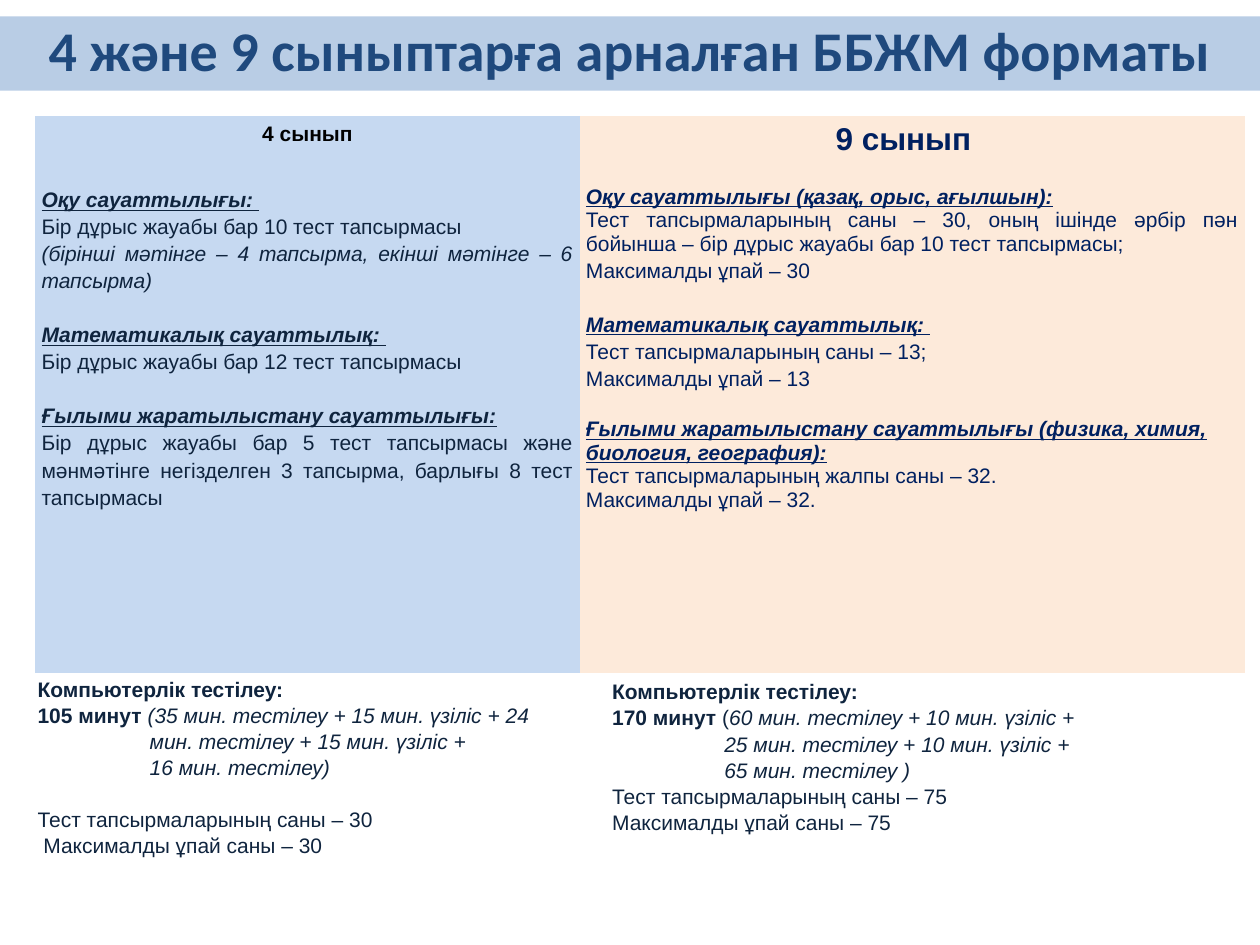
"""Builds a slide that compares the test formats for grades 4 and 9."""
from pptx import Presentation, util as u
from pptx.dml import color as c
from pptx.enum import text as t

COLOURS = {"band": "B9CDE5", "title": "1F497D", "blue": "C6D9F1", "peach": "FDEADA",
           "black": "000000", "navy": "002060", "ink": "0F243E"}
PLAIN_GRID = "{2D5ABB26-0587-4C30-8999-92F81FD0307C}"
CENTER, JUSTIFY, LEFT = t.PP_ALIGN.CENTER, t.PP_ALIGN.JUSTIFY, t.PP_ALIGN.LEFT
GAP = 15.4
HANGING = 0.89


class Deck:
    def __init__(self, columns=100, rows=75):
        self.presentation = Presentation()
        self.presentation.slide_width = u.Inches(10)
        self.presentation.slide_height = u.Inches(7.5)
        self.column = self.presentation.slide_width / columns
        self.row = self.presentation.slide_height / rows
        self.slide = self.presentation.slides.add_slide(self.presentation.slide_layouts[5])

    def box(self, left, top, width, height):
        return (int(left * self.column), int(top * self.row),
                int(width * self.column), int(height * self.row))

    def fill(self, target, colour):
        target.fill.solid()
        target.fill.fore_color.rgb = c.RGBColor.from_string(COLOURS[colour])

    def add_lines(self, frame, lines, colour, size=12, font="Arial", align=LEFT, spacing=1.0):
        for index, (runs, options) in enumerate(lines):
            paragraph = frame.paragraphs[0] if index == 0 else frame.add_paragraph()
            paragraph.alignment = options.get("align", align)
            paragraph.line_spacing = options.get("spacing", spacing)
            paragraph.space_before = u.Pt(options.get("before", 0))
            paragraph.space_after = u.Pt(options.get("after", 0))
            paragraph.font.size = u.Pt(size)
            paragraph.font.name = font
            paragraph.font.color.rgb = c.RGBColor.from_string(COLOURS[colour])
            if "margin" in options:
                properties = paragraph._p.get_or_add_pPr()
                properties.set("marL", str(u.Inches(options["margin"])))
                properties.set("indent", str(u.Inches(options.get("indent", 0))))
            for words, style in runs:
                run = paragraph.add_run()
                run.text = words
                run.font.size, run.font.name = u.Pt(size), font
                run.font.color.rgb = c.RGBColor.from_string(COLOURS[colour])
                run.font.bold = "b" in style
                run.font.italic = "i" in style
                run.font.underline = "u" in style

    def title(self, words, place):
        shape = self.slide.shapes.title
        shape.left, shape.top, shape.width, shape.height = self.box(*place)
        self.fill(shape, "band")
        frame = shape.text_frame
        frame.auto_size = t.MSO_AUTO_SIZE.NONE
        frame.vertical_anchor = t.MSO_ANCHOR.MIDDLE
        self.add_lines(frame, [line(words, "b")], "title", 32, "Calibri", CENTER, 0.9)

    def table(self, place, widths, heights, fills):
        shape = self.slide.shapes.add_table(len(heights), len(widths), *self.box(*place))
        shape.element.xpath(".//a:tableStyleId")[0].text = PLAIN_GRID
        table = shape.table
        table.first_row = table.horz_banding = False
        for column, width in zip(table.columns, widths):
            column.width = int(width * self.column)
        for row, height in zip(table.rows, heights):
            row.height = int(height * self.row)
            for cell, colour in zip(row.cells, fills):
                self.fill(cell, colour)
        return table

    def cell(self, cell, lines, colour, margins, **style):
        (cell.margin_left, cell.margin_top,
         cell.margin_right, cell.margin_bottom) = map(u.Inches, margins)
        self.add_lines(cell.text_frame, lines, colour, **style)

    def text(self, lines, place):
        frame = self.slide.shapes.add_textbox(*self.box(*place)).text_frame
        frame.word_wrap = True
        self.add_lines(frame, lines, "ink", spacing=1.04)


def line(words, style="", **options):
    return [(words, style)], options


def heading(words, **options):
    return line(words, "biu", **options)


GRADE_4 = [
    heading("Оқу сауаттылығы: "),
    line("Бір дұрыс жауабы бар 10 тест тапсырмасы"),
    line("(бірінші мәтінге – 4 тапсырма, екінші мәтінге – 6 тапсырма)", "i"),
    heading("Математикалық сауаттылық: ", before=GAP),
    line("Бір дұрыс жауабы бар 12 тест тапсырмасы"),
    heading("Ғылыми жаратылыстану сауаттылығы:", before=GAP),
    line("Бір дұрыс жауабы бар 5 тест тапсырмасы және мәнмәтінге негізделген "
         "3 тапсырма, барлығы 8 тест тапсырмасы"),
]
LOOSE = {"align": JUSTIFY, "spacing": 1.15}
GRADE_9 = [
    heading("Оқу сауаттылығы (қазақ, орыс, ағылшын):"),
    line("Тест тапсырмаларының саны – 30, оның ішінде әрбір пән бойынша – "
         "бір дұрыс жауабы бар 10 тест тапсырмасы;", align=JUSTIFY, after=2),
    line("Максималды ұпай – 30", align=JUSTIFY),
    heading("Математикалық сауаттылық: ", before=GAP, **LOOSE),
    line("Тест тапсырмаларының саны – 13;", **LOOSE),
    line("Максималды ұпай – 13", **LOOSE),
    heading("Ғылыми жаратылыстану сауаттылығы (физика, химия, биология, география):",
            before=GAP),
    line("Тест тапсырмаларының жалпы саны – 32."),
    line("Максималды ұпай – 32."),
]
TIMING_4 = [
    line("Компьютерлік тестілеу:", "b"),
    ([("105 минут ", "b"),
      ("(35 мин. тестілеу + 15 мин. үзіліс + 24 мин. тестілеу + 15 мин. үзіліс +", "i")],
     {"margin": HANGING, "indent": -HANGING}),
    line("16 мин. тестілеу)", "i", margin=HANGING),
    line("Тест тапсырмаларының саны – 30", before=14.4),
    line(" Максималды ұпай саны – 30"),
]
TIMING_9 = [
    line("Компьютерлік тестілеу:", "b"),
    ([("170 минут ", "b"), ("(", ""), ("60 мин. тестілеу + 10 мин. үзіліс +", "i")], {}),
    line("25 мин. тестілеу + 10 мин. үзіліс +", "i", margin=HANGING),
    line("65 мин. тестілеу )", "i", margin=HANGING),
    line("Тест тапсырмаларының саны – 75"),
    line("Максималды ұпай саны – 75"),
]


def main():
    deck = Deck()
    deck.title("4 және 9 сыныптарға арналған ББЖМ форматы", (0, 1.3, 100, 5.9))
    table = deck.table((2.8, 9.2, 96, 44.2), (43.2, 52.8), (5.5, 38.7), ("blue", "peach"))
    body = (0.05, 0, 0.05, 0)
    deck.cell(table.cell(0, 0), [line("4 сынып", "b")], "black",
              (0.1, 0.05, 0.1, 0.05), align=CENTER)
    deck.cell(table.cell(0, 1), [line("9 сынып", "b")], "navy",
              (0.1, 0.05, 0.24, 0.05), size=18, align=CENTER)
    deck.cell(table.cell(1, 0), GRADE_4, "ink", body, align=JUSTIFY, spacing=1.15)
    deck.cell(table.cell(1, 1), GRADE_9, "navy", body)
    deck.text(TIMING_4, (2, 53.1, 43.3, 15.2))
    deck.text(TIMING_9, (47.6, 53.3, 48.8, 13.1))
    deck.presentation.save("out.pptx")


if __name__ == "__main__":
    main()
